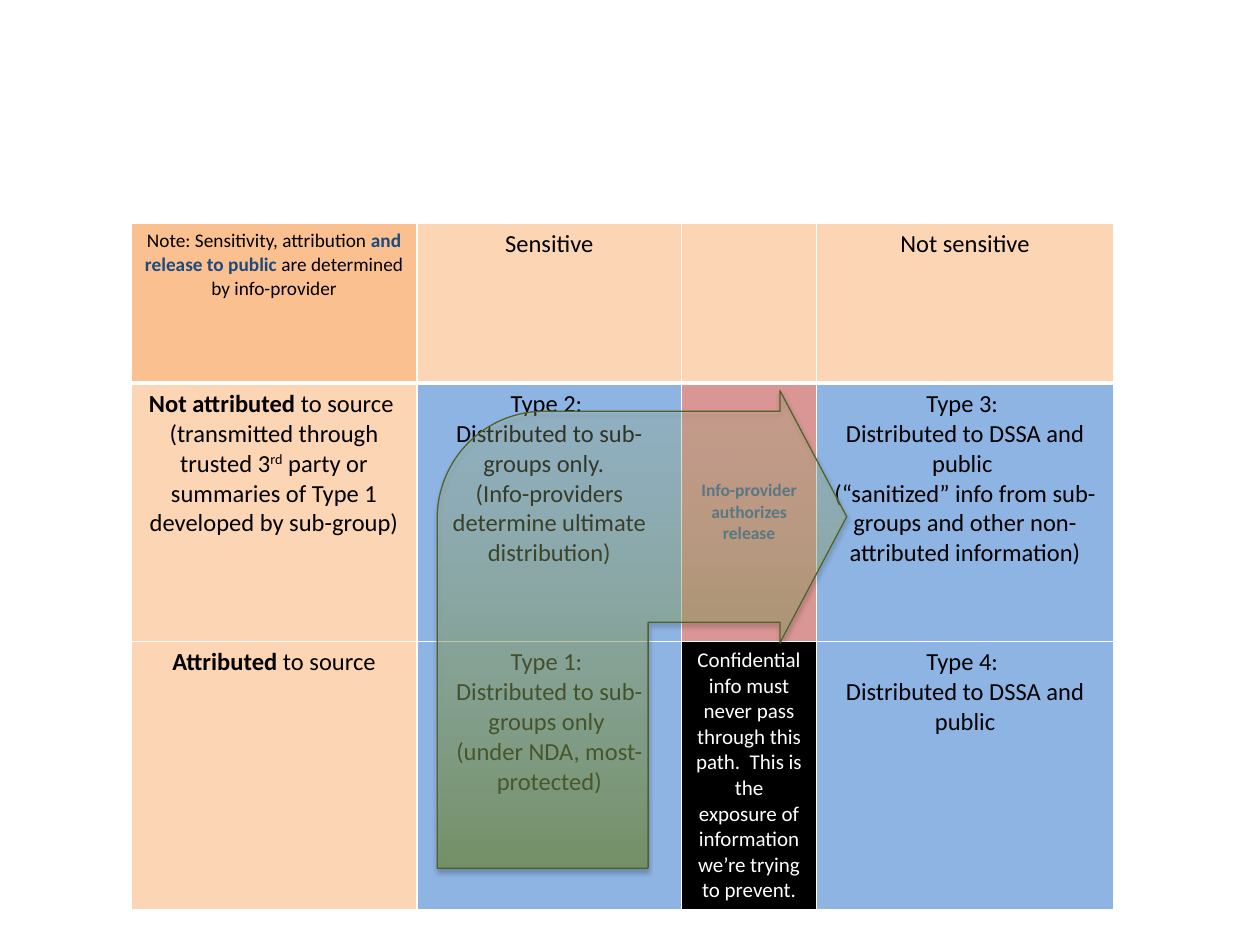
"""Build the slide on how sensitive and attributed information may be released."""
from dataclasses import dataclass

from pptx import Presentation
from pptx.dml.color import RGBColor
from pptx.enum.shapes import MSO_SHAPE
from pptx.enum.text import MSO_ANCHOR, PP_ALIGN
from pptx.oxml import parse_xml
from pptx.oxml.ns import nsdecls, qn
from pptx.util import Inches, Pt

CENTER = PP_ALIGN.CENTER
TOP, MIDDLE = MSO_ANCHOR.TOP, MSO_ANCHOR.MIDDLE
BENT = MSO_SHAPE.BENT_ARROW


@dataclass(frozen=True)
class Theme:
    """Hold the colours, font and type sizes."""
    font: str = "Calibri"
    body: int = 14
    small: int = 12
    note: int = 11
    tiny: int = 10
    black: str = "000000"
    white: str = "FFFFFF"
    navy: str = "1F497D"
    steel: str = "376092"
    orange: str = "FAC090"
    peach: str = "FCD5B5"
    blue: str = "8EB4E3"
    rose: str = "D99694"
    olive: str = "4F6228"
    moss: str = "77933C"
    lime: str = "C3D69B"


T = Theme()
NOTE = {"size": T.note}
BOLD = {"bold": True}
SIZE = (10, 7.5)
SPOT = (1.04, 1.77)
COLS = (2.27, 2.1, 1.07, 2.36)
ROWS = (1.27, 2.05, 2.05)
ARROW = (3.47, 3.1, 3.25, 3.79)
BENDS = (0.515, 0.308, 0.163, 0.261)
FADE = ((T.moss, 63), (T.lime, 22))

CELLS = (
    (
        (T.orange, [[("Note: Sensitivity, attribution ", NOTE),
                     ("and release to public ", {**NOTE, **BOLD, "color": T.navy}),
                     ("are determined by info-provider", NOTE)]]),
        (T.peach, [[("Sensitive", {})]]),
        (T.peach, []),
        (T.peach, [[("Not sensitive", {})]]),
    ),
    (
        (T.peach, [[("Not attributed ", BOLD),
                    ("to source \n(transmitted through trusted 3", {}),
                    ("rd", {"raise": 30}),
                    (" party or summaries of Type 1 developed by sub-group)", {})]]),
        (T.blue, [[("Type 2: \nDistributed to sub-groups only.  \n"
                    "(Info-providers determine ultimate distribution)", {})]]),
        (T.rose, [[("Info-provider authorizes release",
                    {**BOLD, "size": T.tiny, "color": T.steel})]]),
        (T.blue, [[("Type 3: \nDistributed to DSSA and public \n(“sanitized” info from "
                    "sub-groups and other non-attributed information)", {})]]),
    ),
    (
        (T.peach, [[("Attributed", BOLD), (" to source", {})]]),
        (T.blue, [[("Type 1: \nDistributed to sub-groups only \n"
                    "(under NDA, most-protected)", {})]]),
        (T.black, [[("Confidential info must never pass through this path.  This is the "
                     "exposure of information we’re trying to prevent.",
                     {"size": T.small, "color": T.white})]]),
        (T.blue, [[("Type 4: ", {})], [("Distributed to DSSA and public", {})]]),
    ),
)


def paint(fill, color):
    """Give a fill one solid colour."""
    fill.solid()
    fill.fore_color.rgb = RGBColor.from_string(color)


def add_run(para, text, form):
    """Add text in one format, with line breaks at newlines."""
    look = {"name": T.font, "size": T.body, "bold": False, "color": T.black, **form}
    color, lift = look.pop("color"), look.pop("raise", 0)
    look["size"] = Pt(look["size"])
    for i, line in enumerate(text.split("\n")):
        if i:
            para.add_line_break()
        run = para.add_run()
        run.text = line
        for key, value in look.items():
            setattr(run.font, key, value)
        run.font.color.rgb = RGBColor.from_string(color)
        if lift:
            run.font._element.set("baseline", str(lift * 1000))


def add_rules(cell, base):
    """Draw white borders round a cell, with its own width at the base."""
    props = cell._tc.get_or_add_tcPr()
    widths = {"lnL": 1, "lnR": 1, "lnT": 1, "lnB": base}
    for i, (side, width) in enumerate(widths.items()):
        props.insert(i, parse_xml(
            f'<a:{side} {nsdecls("a")} w="{Pt(width)}"><a:solidFill>'
            f'<a:srgbClr val="{T.white}"/></a:solidFill></a:{side}>'))


def fill_cell(cell, color, paras, anchor, base):
    """Set the fill, borders and text of a cell."""
    paint(cell.fill, color)
    add_rules(cell, base)
    cell.vertical_anchor = anchor
    frame = cell.text_frame
    for i, runs in enumerate(paras):
        para = frame.add_paragraph() if i else frame.paragraphs[0]
        para.alignment = CENTER
        for text, form in runs:
            add_run(para, text, form)


def add_grid(slide):
    """Add the table of information types."""
    box = map(Inches, (*SPOT, sum(COLS), sum(ROWS)))
    table = slide.shapes.add_table(len(ROWS), len(COLS), *box).table
    table.first_row = table.horz_banding = False
    for col, width in zip(table.columns, COLS):
        col.width = Inches(width)
    for r, (row, height) in enumerate(zip(table.rows, ROWS)):
        row.height = Inches(height)
        for cell, (color, paras) in zip(row.cells, CELLS[r]):
            anchor = MIDDLE if color == T.rose else TOP
            fill_cell(cell, color, paras, anchor, 1 if r else 3)


def add_arrow(slide):
    """Add the see-through arrow that shows the release path."""
    arrow = slide.shapes.add_shape(BENT, *map(Inches, ARROW))
    for i, bend in enumerate(BENDS):
        arrow.adjustments[i] = bend
    arrow.fill.gradient()
    arrow.fill.gradient_angle = 90
    for stop, (color, _) in zip(arrow.fill.gradient_stops, FADE):
        stop.color.rgb = RGBColor.from_string(color)
    props = arrow._element.spPr
    for node, (_, alpha) in zip(props.iter(qn("a:gs")), FADE):
        node[0].append(parse_xml(f'<a:alpha {nsdecls("a")} val="{alpha * 1000}"/>'))
    paint(arrow.line.fill, T.olive)
    arrow.line.width = Pt(0.75)
    arrow.shadow.inherit = False
    props.find(qn("a:effectLst")).append(parse_xml(
        f'<a:outerShdw {nsdecls("a")} blurRad="{Pt(3.1)}" dist="{Pt(1.8)}" '
        f'dir="5400000" rotWithShape="0"><a:srgbClr val="{T.black}">'
        '<a:alpha val="35000"/></a:srgbClr></a:outerShdw>'))


def main():
    """Build and save the slide."""
    deck = Presentation()
    deck.slide_width, deck.slide_height = map(Inches, SIZE)
    slide = deck.slides.add_slide(deck.slide_layouts[6])
    add_grid(slide)
    add_arrow(slide)
    deck.save("out.pptx")


if __name__ == "__main__":
    main()
